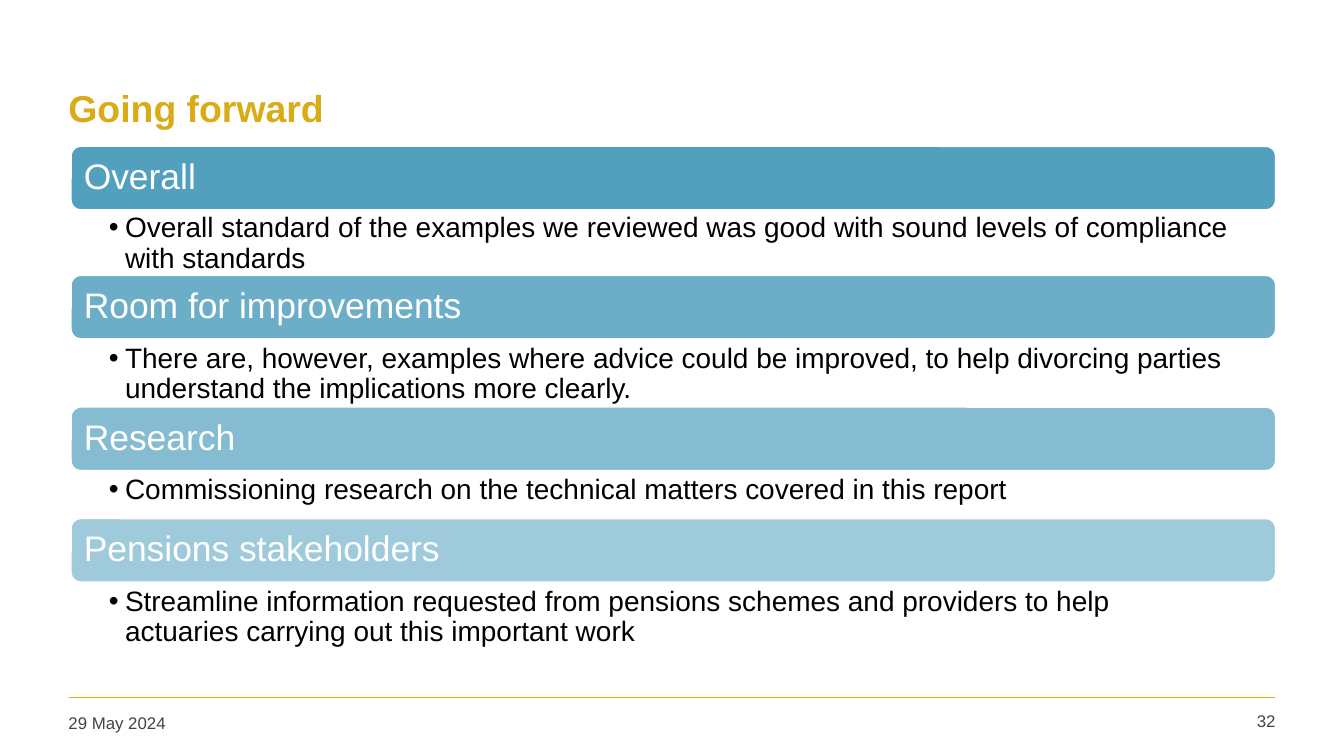
from lxml import etree
from pptx import Presentation
from pptx.dml.color import RGBColor
from pptx.enum.shapes import MSO_CONNECTOR, MSO_SHAPE
from pptx.enum.text import MSO_ANCHOR, PP_ALIGN
from pptx.oxml.ns import qn
from pptx.util import Inches, Pt

LINE, ROUND = MSO_CONNECTOR.STRAIGHT, MSO_SHAPE.ROUNDED_RECTANGLE
TOP, MIDDLE = MSO_ANCHOR.TOP, MSO_ANCHOR.MIDDLE
LEFT, RIGHT = PP_ALIGN.LEFT, PP_ALIGN.RIGHT

GOLD = RGBColor(0xD9, 0xAB, 0x16)
BLUE = RGBColor(0x40, 0x96, 0xB8)
GREY = RGBColor(0x3F, 0x45, 0x48)
WHITE = RGBColor(0xFF, 0xFF, 0xFF)
BLACK = RGBColor(0, 0, 0)

# Content: heading, point, height of the point's box, its upper inset
TITLE, DATE, NUMBER = "Going forward", "29 May 2024", "32"
TOPICS = [
    ("Overall",
     "Overall standard of the examples we reviewed was good with sound "
     "levels of compliance with standards", 0.47, 0.02),
    ("Room for improvements",
     "There are, however, examples where advice could be improved, to help "
     "divorcing parties understand the implications more clearly.",
     0.49, 0.03),
    ("Research",
     "Commissioning research on the technical matters covered in this report",
     0.34, 0.03),
    ("Pensions stakeholders",
     "Streamline information requested from pensions schemes and providers "
     "to help\nactuaries carrying out this important work", 0.49, 0.03),
]

# Text formats
HEAD = {"size": Pt(20), "color": GOLD, "bold": True}
FOOT = {"size": Pt(9), "color": GREY}
LABEL = {"size": Pt(19), "color": WHITE}
POINT = {"size": Pt(15), "color": BLACK}

# Layout
X, Y, WIDTH, BAR = 0.52, 1.08, 8.98, 0.49
FIRST, LAST = 90, 50  # opacity of the top and bottom bars, per cent
PAD = (0.08, 0.04, 0.08, 0.04)


def write(shape, text, form, pad=PAD, anchor=TOP, align=LEFT, bullet=False):
    frame = shape.text_frame
    frame.word_wrap = True
    frame.vertical_anchor = anchor
    for side, size in zip(("left", "top", "right", "bottom"), pad):
        setattr(frame, f"margin_{side}", Inches(size))
    para = frame.paragraphs[0]
    para.text = text
    para.alignment = align
    if bullet:
        para.level = 1
        props = para._p.get_or_add_pPr()
        props.set("marL", str(Inches(0.12)))
        props.set("indent", str(-Inches(0.12)))
        etree.SubElement(props, qn("a:buFont"), typeface="Arial")
        etree.SubElement(props, qn("a:buChar"), char="•")
    for font in [para.font] + [run.font for run in para.runs]:
        font.name = "Arial"
        for key, value in form.items():
            if key == "color":
                font.color.rgb = value
            else:
                setattr(font, key, value)
    return para


def add_box(slide, place, text, form, **rest):
    box = slide.shapes.add_textbox(*map(Inches, place))
    return write(box, text, form, **rest)


def add_bar(slide, top, text, alpha):
    bar = slide.shapes.add_shape(ROUND, *map(Inches, (X, top, WIDTH, BAR)))
    bar.shadow.inherit = False
    bar.fill.solid()
    bar.fill.fore_color.rgb = BLUE
    tone = bar.fill._xPr.find(".//" + qn("a:srgbClr"))
    etree.SubElement(tone, qn("a:alpha"), val=str(round(alpha * 1000)))
    bar.line.color.rgb = WHITE
    bar.line.width = Pt(2)
    para = write(bar, text, LABEL, pad=(0.08, 0.08, 0.08, 0.08), anchor=MIDDLE)
    para.line_spacing = 0.9


def main():
    # Widescreen, 16 to 9
    deck = Presentation()
    deck.slide_width = Inches(10)
    deck.slide_height = deck.slide_width * 9 // 16
    slide = deck.slides.add_slide(deck.slide_layouts[6])

    # Title and footer
    rule = slide.shapes.add_connector(
        LINE, *map(Inches, (0.51, 5.19, 9.49, 5.19)))
    rule.line.color.rgb = GOLD
    rule.line.width = Pt(1)
    etree.SubElement(rule._element.spPr, qn("a:effectLst"))
    add_box(slide, (0.43, 0.33, 9.07, 0.94), TITLE, HEAD, anchor=MIDDLE)
    add_box(slide, (0.43, 5.26, 2.2, 0.27), DATE, FOOT)
    add_box(slide, (8.86, 5.25, 0.71, 0.28), NUMBER, FOOT, align=RIGHT)

    # Stack of fading bars, each with its point below
    top = Y
    step = (FIRST - LAST) / (len(TOPICS) - 1)
    for i, (label, point, height, inset) in enumerate(TOPICS):
        add_bar(slide, top, label, FIRST - i * step)
        top += BAR
        para = add_box(slide, (X, top, WIDTH, height), point, POINT,
                       pad=(0.29, inset, 0.12, inset), bullet=True)
        para.line_spacing = 0.9
        top += height

    deck.save("out.pptx")


if __name__ == "__main__":
    main()
